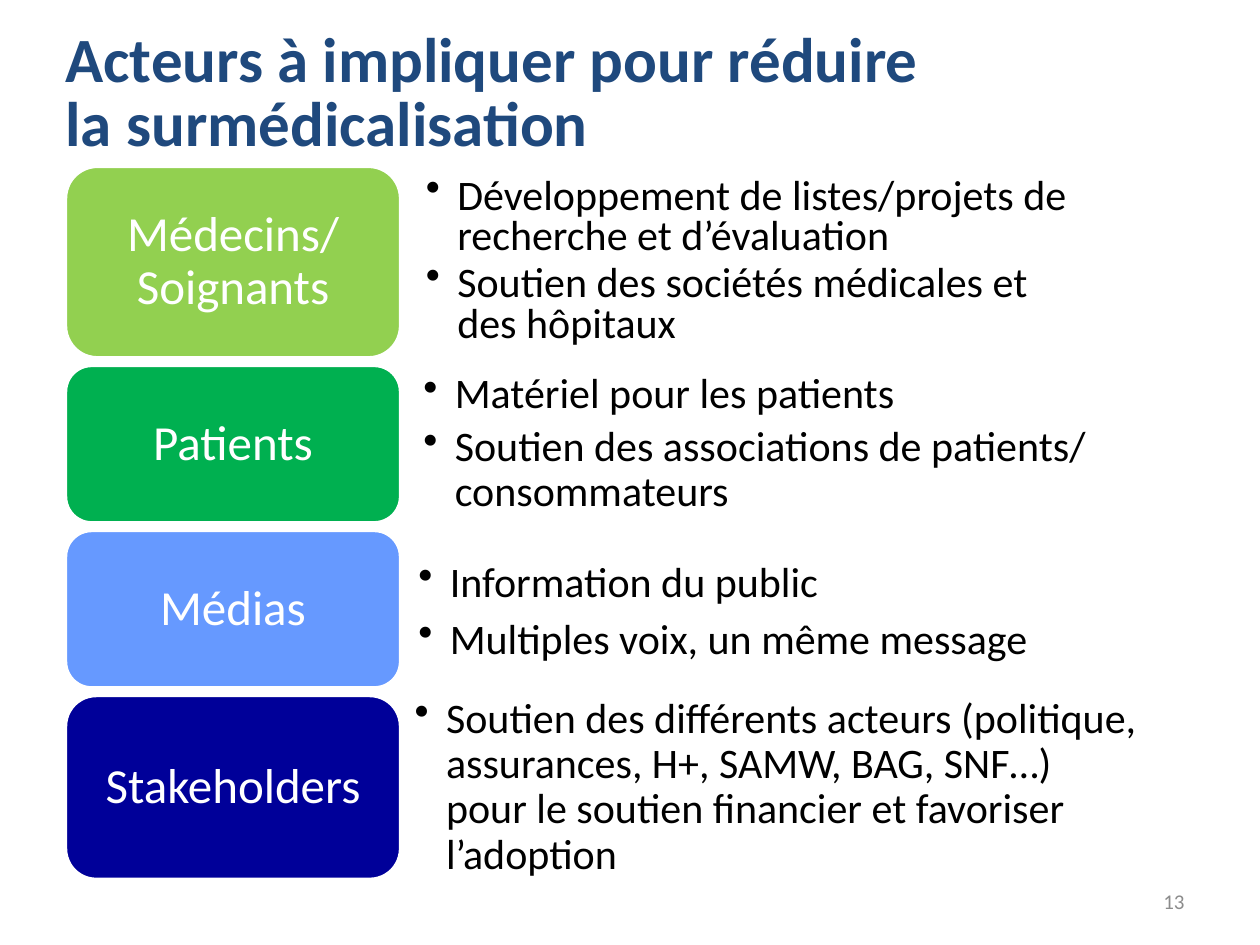
from dataclasses import dataclass

from lxml import etree
from pptx import Presentation, util as u
from pptx.dml.color import RGBColor
from pptx.enum import shapes, text
from pptx.oxml.ns import qn

TITLE = ["Acteurs à impliquer pour réduire ", "la surmédicalisation"]
NUMBER = "13"
ACTORS = [
    dict(label="Médecins/ Soignants", fill="92D050", height=1.52,
         left=3.18, width=6.77, spacing=0.8,
         bullets=[["Développement de listes/projets de recherche et d’évaluation"],
                  ["Soutien des sociétés médicales et ", "des hôpitaux"]]),
    dict(label="Patients", fill="00B050", height=1.25,
         left=3.16, width=6.77, spacing=0.9,
         bullets=[["Matériel pour les patients"],
                  ["Soutien des associations de patients/ consommateurs"]]),
    dict(label="Médias", fill="6699FF", height=1.25,
         left=3.12, width=6.2, spacing=1.0,
         bullets=[["Information du public"],
                  ["Multiples voix, un même message"]]),
    dict(label="Stakeholders", fill="000099", height=1.46,
         left=3.09, width=6.68, spacing=0.9,
         bullets=[["Soutien des différents acteurs (politique, assurances, H+, SAMW, BAG, SNF…)",
                   "pour le soutien financier et favoriser l’adoption"]]),
]


@dataclass
class Theme:
    font: str = "Calibri"
    title: str = "1F497D"
    body: str = "000000"
    light: str = "FFFFFF"
    number: str = "8C8C8C"
    title_size: int = 36
    label_size: int = 28
    body_size: int = 24
    number_size: int = 12


T = Theme()
LEFT, TOP, LABEL_W, GAP, BODY_H = 0.52, 1.32, 2.66, 0.06, 0.9


def rgb(value):
    return RGBColor.from_string(value)


def write(p, lines, size, color, bold=False, align=text.PP_ALIGN.LEFT, spacing=1.0):
    p.alignment = align
    p.line_spacing = spacing
    for i, line in enumerate(lines):
        if i:
            p.add_line_break()
        r = p.add_run()
        r.text = line
        r.font.name = T.font
        r.font.size = u.Pt(size)
        r.font.bold = bold
        r.font.color.rgb = rgb(color)


def frame(sp, margins):
    tf = sp.text_frame
    tf.word_wrap = True
    tf.auto_size = text.MSO_AUTO_SIZE.NONE
    tf.vertical_anchor = text.MSO_ANCHOR.MIDDLE
    (tf.margin_left, tf.margin_top,
     tf.margin_right, tf.margin_bottom) = map(u.Inches, margins)
    return tf


def bullet(p):
    pPr = p._p.get_or_add_pPr()
    pPr.set("marL", str(u.Inches(0.25)))
    pPr.set("indent", str(u.Inches(-0.25)))
    etree.SubElement(pPr, qn("a:buChar")).set("char", "•")


def add_label(s, actor, top):
    sp = s.shapes.add_shape(shapes.MSO_SHAPE.ROUNDED_RECTANGLE, u.Inches(LEFT), u.Inches(top),
                            u.Inches(LABEL_W), u.Inches(actor["height"]))
    sp.shadow.inherit = False
    sp.fill.solid()
    sp.fill.fore_color.rgb = rgb(actor["fill"])
    sp.line.color.rgb = rgb(T.light)
    sp.line.width = u.Pt(2)
    tf = frame(sp, (0.12, 0.06, 0.12, 0.06))
    write(tf.paragraphs[0], [actor["label"]], T.label_size, T.light,
          align=text.PP_ALIGN.CENTER, spacing=0.9)


def add_bullets(s, actor, top):
    body_top = top + (actor["height"] - BODY_H) / 2
    sp = s.shapes.add_textbox(u.Inches(actor["left"]), u.Inches(body_top),
                              u.Inches(actor["width"]), u.Inches(BODY_H))
    tf = frame(sp, (0.2, 0.14, 0.27, 0.14))
    for i, lines in enumerate(actor["bullets"]):
        p = tf.add_paragraph() if i else tf.paragraphs[0]
        bullet(p)
        p.space_after = u.Pt(4)
        write(p, lines, T.body_size, T.body, spacing=actor["spacing"])


def main():
    prs = Presentation()
    prs.slide_width, prs.slide_height = u.Inches(10), u.Inches(7.5)
    s = prs.slides.add_slide(prs.slide_layouts[5])

    sp = s.shapes.title
    sp.left, sp.top, sp.width, sp.height = map(u.Inches, (0.42, 0.44, 7.83, 0.63))
    tf = frame(sp, (0.1, 0.05, 0.1, 0.05))
    write(tf.paragraphs[0], TITLE, T.title_size, T.title, bold=True, spacing=0.85)

    top = TOP
    for actor in ACTORS:
        add_bullets(s, actor, top)
        add_label(s, actor, top)
        top += actor["height"] + GAP

    sp = s.shapes.add_textbox(*map(u.Inches, (7.17, 6.95, 2.33, 0.4)))
    tf = frame(sp, (0.1, 0.05, 0.1, 0.05))
    write(tf.paragraphs[0], [NUMBER], T.number_size, T.number, align=text.PP_ALIGN.RIGHT)

    prs.save("out.pptx")


if __name__ == "__main__":
    main()
